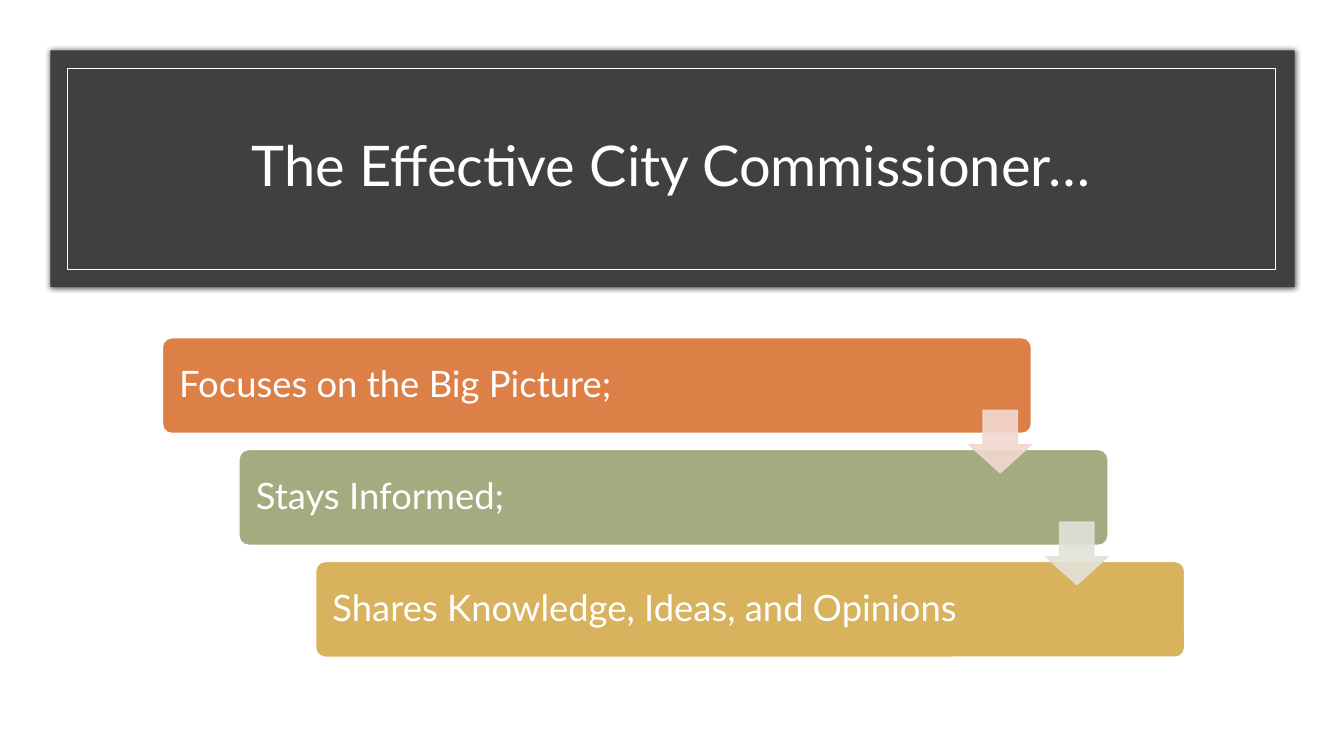
from dataclasses import dataclass

import lxml.etree
import pptx
import pptx.dml.color
import pptx.enum.shapes
import pptx.enum.text
import pptx.oxml
import pptx.oxml.ns
import pptx.util

PX = 9144  # 100 px to the inch
FONT = "Lato"
COLOURS = {
    "white": "FFFFFF",
    "banner": "404040",
    "shadow": "000000",
    "orange": "DD8047",
    "green": "A5AB81",
    "gold": "D8B25C",
    "pale_orange": "F2D8CF",
    "pale_green": "E1E2D8",
}
SHAPE = pptx.enum.shapes.MSO_SHAPE
ALIGN = pptx.enum.text.PP_ALIGN
MIDDLE = pptx.enum.text.MSO_ANCHOR.MIDDLE
STAGGER_X, STAGGER_Y = 76, 111


@dataclass(frozen=True)
class Box:
    left: int
    top: int
    width: int
    height: int

    def staggered(self, index: int) -> "Box":
        return Box(self.left + index * STAGGER_X, self.top + index * STAGGER_Y,
                   self.width, self.height)

    def emu(self) -> list[int]:
        return [v * PX for v in (self.left, self.top, self.width, self.height)]


@dataclass(frozen=True)
class Step:
    text: str
    fill: str


STEPS = [
    Step("Focuses on the Big Picture;", "orange"),
    Step("Stays Informed;", "green"),
    Step("Shares Knowledge, Ideas, and Opinions", "gold"),
]
ARROW_FILLS = ["pale_orange", "pale_green"]
BANNER = Box(50, 50, 1234, 235)
BANNER_FRAME = Box(67, 68, 1198, 199)
TITLE = Box(116, 92, 1100, 150)
FIRST_STEP = Box(161, 335, 862, 95)
FIRST_ARROW = Box(961, 407, 62, 62)


def rgb(name: str) -> pptx.dml.color.RGBColor:
    return pptx.dml.color.RGBColor.from_string(COLOURS[name])


def set_all(target, values: dict) -> None:
    for name, value in values.items():
        setattr(target, name, value)


def add_block(slide, kind, box: Box, fill: str = "", line: str = "",
              line_width: float = 1, adjustments: tuple[float, ...] = ()):
    block = slide.shapes.add_shape(kind, *box.emu())
    block.shadow.inherit = False
    for index, value in enumerate(adjustments):
        block.adjustments[index] = value
    if fill:
        block.fill.solid()
        block.fill.fore_color.rgb = rgb(fill)
    else:
        block.fill.background()
    if line:
        block.line.color.rgb = rgb(line)
        block.line.width = pptx.util.Pt(line_width)
    else:
        block.line.fill.background()
    return block


def write_text(shape, text: str, size: int, frame_format: dict, paragraph_format: dict) -> None:
    frame = shape.text_frame
    set_all(frame, {"word_wrap": True, "vertical_anchor": MIDDLE, **frame_format})
    paragraph = frame.paragraphs[0]
    set_all(paragraph, {"line_spacing": 0.9, **paragraph_format})
    run = paragraph.add_run()
    run.text = text
    set_all(run.font, {"name": FONT, "size": pptx.util.Pt(size)})
    run.font.color.rgb = rgb("white")


def add_shadow(shape, blur: float, opacity: int) -> None:
    effects = shape.element.spPr.find(pptx.oxml.ns.qn("a:effectLst"))
    effects.append(pptx.oxml.parse_xml(
        f'<a:outerShdw {pptx.oxml.ns.nsdecls("a")} blurRad="{pptx.util.Pt(blur)}" dist="0"'
        f' algn="ctr" rotWithShape="0"><a:srgbClr val="{COLOURS["shadow"]}">'
        f'<a:alpha val="{opacity * 1000}"/></a:srgbClr></a:outerShdw>'))


def set_opacity(shape, opacity: int) -> None:
    qn = pptx.oxml.ns.qn
    for colour in shape.element.spPr.iter(qn("a:srgbClr")):
        lxml.etree.SubElement(colour, qn("a:alpha")).set("val", str(opacity * 1000))


def add_banner(slide) -> None:
    banner = add_block(slide, SHAPE.RECTANGLE, BANNER, "banner")
    add_shadow(banner, blur=4, opacity=66)
    add_block(slide, SHAPE.RECTANGLE, BANNER_FRAME, line="white", line_width=0.5)
    title = slide.shapes.title
    set_all(title, dict(zip(("left", "top", "width", "height"), TITLE.emu())))
    write_text(title, "The Effective City Commissioner…", 40, {}, {"alignment": ALIGN.CENTER})
    # Bring the title in front of the banner
    title.element.getparent().append(title.element)


def add_step(slide, index: int, step: Step) -> None:
    bar = add_block(slide, SHAPE.ROUNDED_RECTANGLE, FIRST_STEP.staggered(index),
                    step.fill, "white", adjustments=(0.1,))
    write_text(bar, step.text, 26, {"margin_left": 14 * PX, "margin_right": 14 * PX},
               {"alignment": ALIGN.LEFT})


def add_arrow(slide, index: int, fill: str) -> None:
    arrow = add_block(slide, SHAPE.DOWN_ARROW, FIRST_ARROW.staggered(index),
                      fill, fill, adjustments=(0.55, 0.45))
    set_opacity(arrow, 90)


def main() -> None:
    deck = pptx.Presentation()
    set_all(deck, {"slide_width": 1333 * PX, "slide_height": 750 * PX})
    slide = deck.slides.add_slide(deck.slide_layouts.get_by_name("Title Only"))
    slide.background.fill.solid()
    slide.background.fill.fore_color.rgb = rgb("white")

    # Title banner
    add_banner(slide)

    # Staggered steps, then the arrows that link them
    for index, step in enumerate(STEPS):
        add_step(slide, index, step)
    for index, fill in enumerate(ARROW_FILLS):
        add_arrow(slide, index, fill)

    deck.save("out.pptx")


if __name__ == "__main__":
    main()
